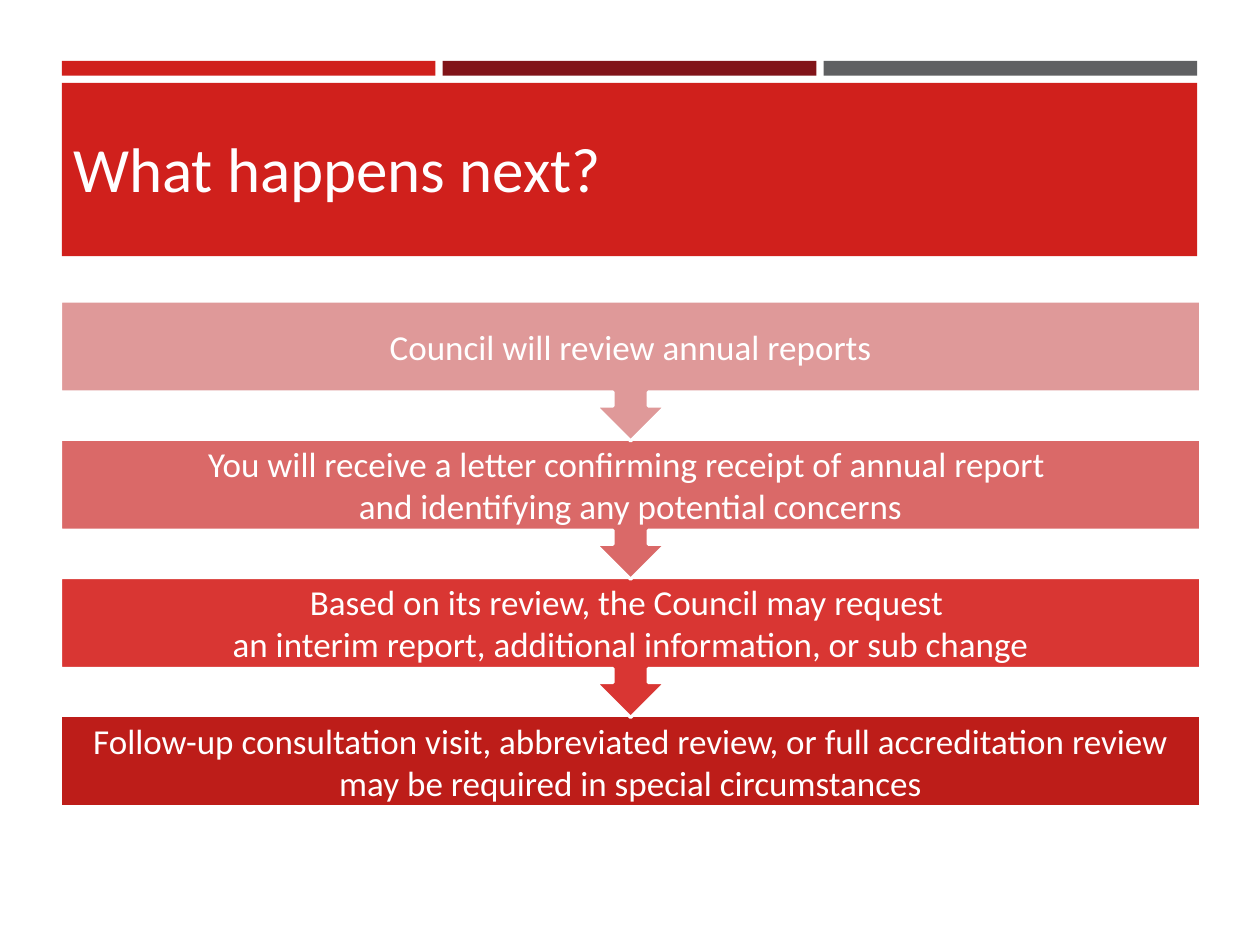
from dataclasses import dataclass

from pptx import Presentation
from pptx.dml.color import RGBColor
from pptx.enum import shapes, text
from pptx.util import Pt


@dataclass(frozen=True)
class Theme:
    font: str = "Calibri"
    title_size: float = 36
    step_size: float = 20
    white: str = "FFFFFF"
    title_ink: str = "FFFEFF"
    red: str = "D0201C"
    dark_red: str = "811419"
    grey: str = "5F6062"


THEME = Theme()
STEP_LEFT, STEP_TOP, STEP_WIDTH = 34.6, 172, 651.5
STEP_PITCH, BOX_HEIGHT, CALLOUT_HEIGHT = 79, 52, 80
STEPS = [
    ("DF9999", ["Council will review annual reports"]),
    ("DA6968", ["You will receive a letter confirming receipt of annual report ",
                "and identifying any potential concerns"]),
    ("D93633", ["Based on its review, the Council may request ",
                "an interim report, additional information, or sub change"]),
    ("BD1D19", ["Follow-up consultation visit, abbreviated review, or full "
                "accreditation review may be required in special circumstances"]),
]


def add_block(s, kind, left, top, width, height, fill, line=None):
    sp = s.shapes.add_shape(kind, Pt(left), Pt(top), Pt(width), Pt(height))
    sp.shadow.inherit = False
    sp.fill.solid()
    sp.fill.fore_color.rgb = RGBColor.from_string(fill)
    if line:
        sp.line.color.rgb = RGBColor.from_string(line)
        sp.line.width = Pt(1.75)
    else:
        sp.line.fill.background()
    return sp


def add_run(p, words, size, color):
    r = p.add_run()
    r.text = words
    r.font.name = THEME.font
    r.font.size = Pt(size)
    r.font.color.rgb = RGBColor.from_string(color)


def add_header(s):
    """Three accent bars above the title band."""
    left, width, pitch = 35.4, 213.5, 217.6
    rect = shapes.MSO_SHAPE.RECTANGLE
    for i, fill in enumerate((THEME.red, THEME.dark_red, THEME.grey)):
        add_block(s, rect, left + i * pitch, 34.8, width, 8.4, fill)
    add_block(s, rect, left, 47.4, 2 * pitch + width, 99, THEME.red)


def set_title(s, words):
    title = s.shapes.title
    s.shapes._spTree.append(title._element)  # in front of the band
    title.left, title.top = Pt(STEP_LEFT), Pt(55.4)
    title.width, title.height = Pt(STEP_WIDTH), Pt(80)
    tf = title.text_frame
    tf.vertical_anchor = text.MSO_ANCHOR.MIDDLE
    p = tf.paragraphs[0]
    p.alignment = text.PP_ALIGN.LEFT
    add_run(p, words, THEME.title_size, THEME.title_ink)


def add_step_text(s, top, lines):
    sp = s.shapes.add_textbox(Pt(STEP_LEFT), Pt(top), Pt(STEP_WIDTH), Pt(BOX_HEIGHT))
    tf = sp.text_frame
    tf.word_wrap = True
    tf.vertical_anchor = text.MSO_ANCHOR.MIDDLE
    tf.margin_left = tf.margin_right = tf.margin_top = tf.margin_bottom = Pt(11.5)
    p = tf.paragraphs[0]
    p.alignment = text.PP_ALIGN.CENTER
    p.space_after = Pt(7)
    for i, line in enumerate(lines):
        if i:
            p.add_line_break()
        add_run(p, line, THEME.step_size, THEME.white)


def add_step(s, index, fill, lines):
    """A callout pointing down to the next step; the last step is a plain box."""
    top = STEP_TOP + index * STEP_PITCH
    if index == len(STEPS) - 1:
        add_block(s, shapes.MSO_SHAPE.RECTANGLE, STEP_LEFT, top, STEP_WIDTH,
                  BOX_HEIGHT, fill, THEME.white)
    else:
        sp = add_block(s, shapes.MSO_SHAPE.UP_ARROW_CALLOUT, STEP_LEFT, top,
                       STEP_WIDTH, CALLOUT_HEIGHT, fill, THEME.white)
        sp.rotation = 180
    add_step_text(s, top, lines)


def main():
    prs = Presentation()
    prs.slide_width, prs.slide_height = Pt(720), Pt(540)
    s = prs.slides.add_slide(prs.slide_layouts[5])
    add_header(s)
    set_title(s, "What happens next?")
    for index, (fill, lines) in reversed(list(enumerate(STEPS))):
        add_step(s, index, fill, lines)
    prs.save("out.pptx")


if __name__ == "__main__":
    main()
